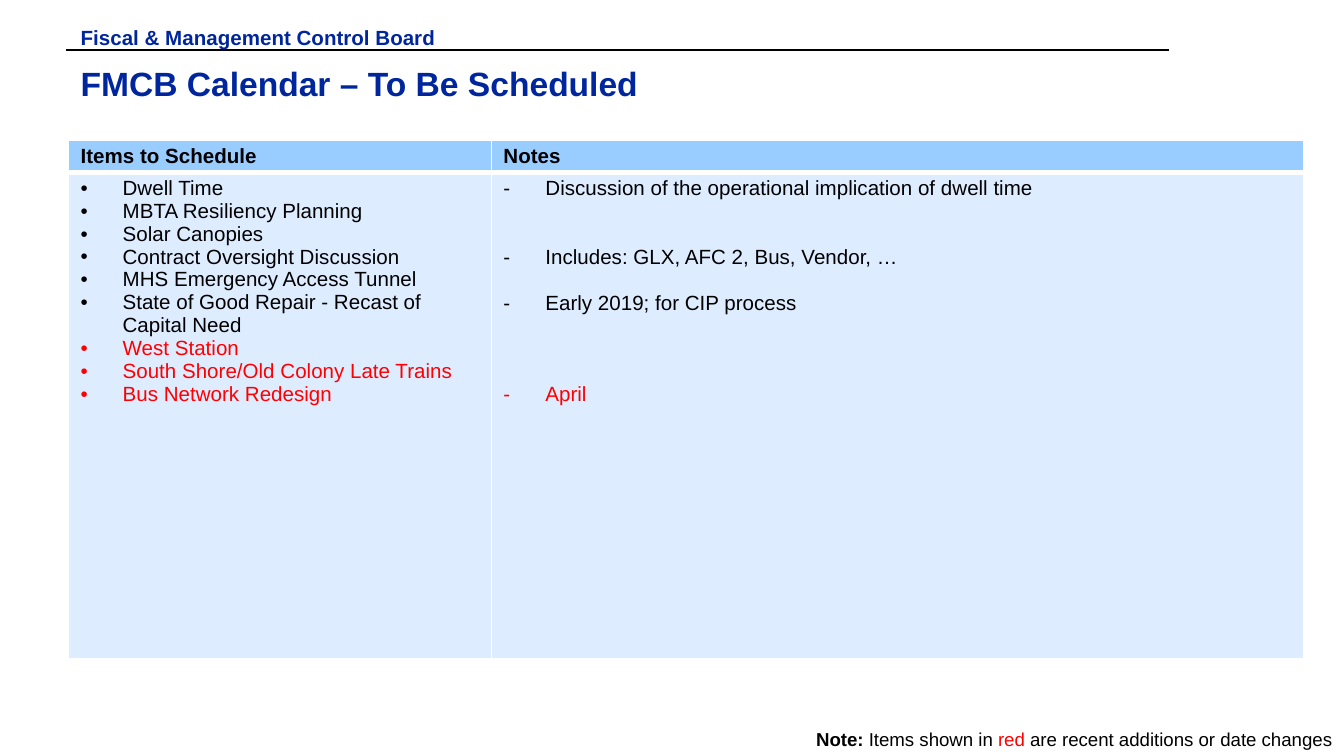
from lxml import etree
from pptx import Presentation
from pptx.dml.color import RGBColor
from pptx.enum import shapes, text
from pptx.oxml import ns
from pptx.util import Pt

FONT = "Arial"
NAVY, BLACK, RED, WHITE = "00269E", "000000", "FF0000", "FFFFFF"
HEADER_FILL, BODY_FILL = "99CCFF", "DEECFF"
LINE_PITCH = 12.3
HEADINGS = ["Items to Schedule", "Notes"]
ITEMS = [
    ("Dwell Time", BLACK, 0),
    ("MBTA Resiliency Planning", BLACK, 0),
    ("Solar Canopies", BLACK, 0),
    ("Contract Oversight Discussion", BLACK, 0),
    ("MHS Emergency Access Tunnel", BLACK, 0),
    ("State of Good Repair - Recast of Capital Need", BLACK, 0),
    ("West Station", RED, 0),
    ("South Shore/Old Colony Late Trains", RED, 0),
    ("Bus Network Redesign", RED, 0),
]
NOTES = [
    ("Discussion of the operational implication of dwell time", BLACK, 0),
    ("Includes: GLX, AFC 2, Bus, Vendor, …", BLACK, 2),
    ("Early 2019; for CIP process", BLACK, 1),
    ("April", RED, 3),
]


def color(value):
    """Turn a hex string into a colour."""
    return RGBColor.from_string(value)


def set_font(target, size, value, bold=False):
    """Style the font of a paragraph or a span."""
    font = target.font
    font.name, font.size, font.bold = FONT, Pt(size), bold
    font.color.rgb = color(value)


def add_text(page, left, top, width, height, inset_top=3):
    """Add an empty text box and return its frame."""
    box = page.shapes.add_textbox(Pt(left), Pt(top), Pt(width), Pt(height))
    frame = box.text_frame
    frame.margin_left = frame.margin_right = Pt(6.5)
    frame.margin_top, frame.margin_bottom = Pt(inset_top), Pt(3)
    frame.word_wrap = True
    return frame


def add_heading(page, left, top, width):
    """Place the board name, its rule and the slide title."""
    rule = page.shapes.add_connector(
        shapes.MSO_CONNECTOR.STRAIGHT,
        Pt(left - 1.5), Pt(top + 18), Pt(left + width - 12.5), Pt(top + 18))
    rule.line.color.rgb = color(BLACK)
    rule.line.width = Pt(1)
    etree.SubElement(rule.element.spPr, ns.qn("a:effectLst"))
    lines = [("FMCB Calendar – To Be Scheduled", 18, 20.2, width, 34.5),
             ("Fiscal & Management Control Board", 11, 0, 245.5, 13.7)]
    for words, size, offset, room, height in lines:
        frame = add_text(page, left, top + offset, room, height, inset_top=4.8)
        para = frame.paragraphs[0]
        para.text = words
        set_font(para, size, NAVY, True)


def style_cell(cell, fill, top, bottom):
    """Give a cell its margins, white borders and fill."""
    cell.margin_left = cell.margin_right = Pt(6.5)
    cell.margin_top = cell.margin_bottom = Pt(2.2)
    properties = cell._tc.get_or_add_tcPr()
    for side, width in zip("LRTB", (1, 1, top, bottom)):
        border = etree.SubElement(properties, ns.qn(f"a:ln{side}"), w=str(Pt(width)))
        solid = etree.SubElement(border, ns.qn("a:solidFill"))
        etree.SubElement(solid, ns.qn("a:srgbClr"), val=WHITE)
    cell.fill.solid()
    cell.fill.fore_color.rgb = color(fill)


def fill_list(frame, entries, bullet):
    """Write bulleted entries, each after its number of skipped lines."""
    for index, (words, value, skipped) in enumerate(entries):
        para = frame.paragraphs[0] if index == 0 else frame.add_paragraph()
        para.text = words
        properties = para._p.get_or_add_pPr()
        properties.set("marL", str(Pt(22.5)))
        properties.set("indent", str(-Pt(22.5)))
        etree.SubElement(properties, ns.qn("a:buFont"), typeface=FONT)
        etree.SubElement(properties, ns.qn("a:buChar"), char=bullet)
        if skipped:
            para.space_before = Pt(skipped * LINE_PITCH)
        set_font(para, 11, value)


def add_schedule(page, left, top, widths, heights):
    """Place the table of items and notes."""
    frame = page.shapes.add_table(
        2, 2, Pt(left), Pt(top), Pt(sum(widths)), Pt(sum(heights)))
    table = frame.table
    for row, height in zip(table.rows, heights):
        row.height = Pt(height)
    lists = [(ITEMS, "•"), (NOTES, "-")]
    for index, (heading, width, entries) in enumerate(zip(HEADINGS, widths, lists)):
        table.columns[index].width = Pt(width)
        header, body = table.cell(0, index), table.cell(1, index)
        style_cell(header, HEADER_FILL, 1, 3)
        style_cell(body, BODY_FILL, 3, 1)
        header.vertical_anchor = text.MSO_ANCHOR.MIDDLE
        para = header.text_frame.paragraphs[0]
        para.text = heading
        set_font(para, 11, BLACK, True)
        fill_list(body.text_frame, *entries)


def add_legend(page, left, top, width, height):
    """Place the note that explains the red items."""
    frame = add_text(page, left, top, width, height)
    frame.word_wrap = False
    frame.vertical_anchor = text.MSO_ANCHOR.MIDDLE
    para = frame.paragraphs[0]
    para.alignment = text.PP_ALIGN.RIGHT
    spans = [("Note: ", BLACK, True), ("Items shown in ", BLACK, False),
             ("red", RED, False),
             (" are recent additions or date changes", BLACK, False)]
    for words, value, bold in spans:
        span = para.add_run()
        span.text = words
        set_font(span, 10, value, bold)


def main():
    """Build and save the deck."""
    deck = Presentation()
    deck.slide_width, deck.slide_height = Pt(720), Pt(405)
    page = deck.slides.add_slide(deck.slide_layouts[6])
    add_heading(page, 36.7, 8.6, 602)
    add_schedule(page, 36.7, 75, (226.5, 435.3), (17, 260.5))
    add_legend(page, 417.6, 386.8, 302.4, 18.7)
    deck.save("out.pptx")


if __name__ == "__main__":
    main()
